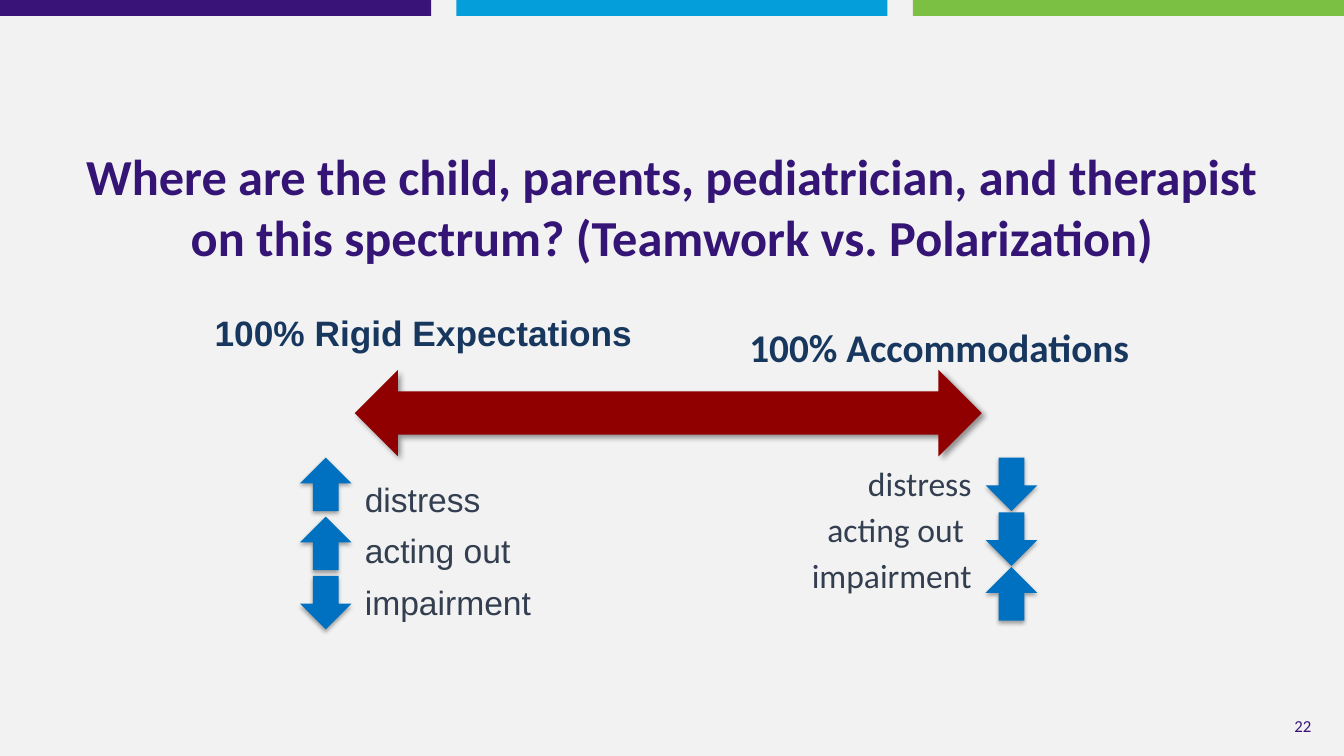
from dataclasses import dataclass

import pptx
import pptx.dml.color
import pptx.enum.shapes
import pptx.enum.text
import pptx.oxml
import pptx.oxml.ns
import pptx.util
from pptx.util import Cm, Pt

ALIGN = pptx.enum.text.PP_ALIGN
ANCHOR = pptx.enum.text.MSO_ANCHOR
SHAPE = pptx.enum.shapes.MSO_SHAPE


@dataclass(frozen=True)
class Theme:
    background: str = "F2F2F2"
    bars: tuple[str, ...] = ("391378", "049FDA", "7BBF43")
    title: str = "341575"
    heading: str = "17375E"
    body: str = "333F50"
    number: str = "391378"
    spectrum: str = "900000"
    arrow: str = "0070C0"
    sans: str = "Arial"
    humanist: str = "Calibri"
    title_size: float = 36
    heading_size: float = 28
    rigid_size: float = 25.2
    body_size: float = 24
    number_size: float = 12


@dataclass(frozen=True)
class Box:
    left: float
    top: float
    width: float
    height: float

    def lengths(self) -> tuple[pptx.util.Length, ...]:
        return Cm(self.left), Cm(self.top), Cm(self.width), Cm(self.height)


@dataclass(frozen=True)
class TextStyle:
    font: str
    size: float
    color: str
    bold: bool = False
    align: ALIGN = ALIGN.LEFT
    anchor: ANCHOR = ANCHOR.MIDDLE
    line_spacing: float = 1.0
    space_before: float = 0


@dataclass(frozen=True)
class Shadow:
    opacity: int  # percent
    blur: float  # points
    distance: float  # points
    angle: int  # degrees


@dataclass(frozen=True)
class ArrowColumn:
    left: float
    pitch: float
    rotations: tuple[int, ...]


THEME = Theme()
WIDTH, HEIGHT = 33.87, 19.05
BAR_GAP, BAR_HEIGHT = 0.64, 0.4
ARROWS_TOP, ARROW_WIDTH, ARROW_HEIGHT = 11.53, 1.3, 1.35
UP, DOWN = 0, 180
EFFECTS = ("distress", "acting out", "impairment")
SPECTRUM_SHADOW = Shadow(40, 4, 3, 45)
ARROW_SHADOW = Shadow(35, 3.1, 1.8, 90)
ARROW_COLUMNS = (
    ArrowColumn(7.56, 1.49, (UP, UP, DOWN)),
    ArrowColumn(24.84, 1.38, (DOWN, DOWN, UP)),
)


def rgb(color: str) -> pptx.dml.color.RGBColor:
    return pptx.dml.color.RGBColor.from_string(color)


def apply(target, values: dict) -> None:
    for name, value in values.items():
        setattr(target, name, value)


def write(shape, box: Box, lines: tuple[str, ...], style: TextStyle) -> None:
    """Place a text shape and fill it with one paragraph for each line."""
    apply(shape, dict(zip(("left", "top", "width", "height"), box.lengths())))
    frame = shape.text_frame
    apply(frame, {
        "word_wrap": True,
        "auto_size": pptx.enum.text.MSO_AUTO_SIZE.NONE,
        "vertical_anchor": style.anchor,
    })
    for index, line in enumerate(lines):
        paragraph = frame.paragraphs[0] if index == 0 else frame.add_paragraph()
        properties = paragraph._p.get_or_add_pPr()
        properties.set("marL", "0")
        properties.set("indent", "0")
        pptx.oxml.ns.qn("a:buNone")
        properties.append(pptx.oxml.parse_xml(
            f'<a:buNone {pptx.oxml.ns.nsdecls("a")}/>'))
        apply(paragraph, {
            "alignment": style.align,
            "line_spacing": style.line_spacing,
            "space_before": Pt(style.space_before if index else 0),
        })
        run = paragraph.add_run()
        run.text = line
        apply(run.font, {"name": style.font, "size": Pt(style.size), "bold": style.bold})
        run.font.color.rgb = rgb(style.color)


def add_text(slide, box: Box, lines: tuple[str, ...], style: TextStyle) -> None:
    write(slide.shapes.add_textbox(*box.lengths()), box, lines, style)


def add_block(slide, kind: SHAPE, box: Box, color: str,
              shadow: Shadow | None = None, rotation: int = 0) -> None:
    """Add a filled shape without outline, with a soft shadow if one is given."""
    shape = slide.shapes.add_shape(kind, *box.lengths())
    shape.rotation = rotation
    shape.fill.solid()
    shape.fill.fore_color.rgb = rgb(color)
    shape.line.fill.background()
    shape.shadow.inherit = False
    if shadow:
        effects = shape._element.spPr.find(pptx.oxml.ns.qn("a:effectLst"))
        effects.append(pptx.oxml.parse_xml(
            f'<a:outerShdw {pptx.oxml.ns.nsdecls("a")} blurRad="{Pt(shadow.blur)}" '
            f'dist="{Pt(shadow.distance)}" dir="{shadow.angle * 60000}" '
            f'rotWithShape="0"><a:srgbClr val="000000">'
            f'<a:alpha val="{shadow.opacity * 1000}"/></a:srgbClr></a:outerShdw>'))


def main() -> None:
    presentation = pptx.Presentation()
    apply(presentation, {"slide_width": Cm(WIDTH), "slide_height": Cm(HEIGHT)})
    slide = presentation.slides.add_slide(
        presentation.slide_layouts.get_by_name("Two Content"))
    slide.background.fill.solid()
    slide.background.fill.fore_color.rgb = rgb(THEME.background)
    title, rigid_list, accommodation_list = slide.placeholders

    # Colour bars and slide number
    bar_width = (WIDTH - 2 * BAR_GAP) / 3
    for index, color in enumerate(THEME.bars):
        left = index * (bar_width + BAR_GAP)
        add_block(slide, SHAPE.RECTANGLE, Box(left, 0, bar_width, BAR_HEIGHT), color)
    add_text(slide, Box(32.05, 17.78, 1.25, 1.02), ("22",),
             TextStyle(THEME.humanist, THEME.number_size, THEME.number, align=ALIGN.RIGHT))

    # Title
    write(title, Box(1.85, 3.53, 30.18, 3.33),
          ("Where are the child, parents, pediatrician, and therapist "
           "on this spectrum? (Teamwork vs. Polarization)",),
          TextStyle(THEME.humanist, THEME.title_size, THEME.title, True,
                    ALIGN.CENTER, ANCHOR.TOP))

    # Ends of the spectrum
    add_text(slide, Box(5.16, 7.72, 11.94, 1.3), ("100% Rigid Expectations",),
             TextStyle(THEME.sans, THEME.rigid_size, THEME.heading, True))
    add_text(slide, Box(17.55, 8.1, 11.15, 1.3), ("100% Accommodations",),
             TextStyle(THEME.humanist, THEME.heading_size, THEME.heading, True, ALIGN.RIGHT))
    add_block(slide, SHAPE.LEFT_RIGHT_ARROW, Box(8.94, 9.32, 15.8, 2.18),
              THEME.spectrum, SPECTRUM_SHADOW)

    # Effects at each end
    write(rigid_list, Box(8.94, 12.05, 7.9, 4.57), EFFECTS,
          TextStyle(THEME.sans, THEME.body_size, THEME.body, anchor=ANCHOR.TOP,
                    line_spacing=0.9, space_before=10.9))
    distress, acting_out, impairment = EFFECTS
    write(accommodation_list, Box(16.84, 11.53, 7.9, 5.05),
          (distress, acting_out + " ", impairment),
          TextStyle(THEME.humanist, THEME.body_size, THEME.body, align=ALIGN.RIGHT,
                    anchor=ANCHOR.TOP, space_before=4.3))
    for column in ARROW_COLUMNS:
        for row, rotation in enumerate(column.rotations):
            box = Box(column.left, ARROWS_TOP + row * column.pitch, ARROW_WIDTH, ARROW_HEIGHT)
            add_block(slide, SHAPE.UP_ARROW, box, THEME.arrow, ARROW_SHADOW, rotation)

    presentation.save("out.pptx")


if __name__ == "__main__":
    main()
